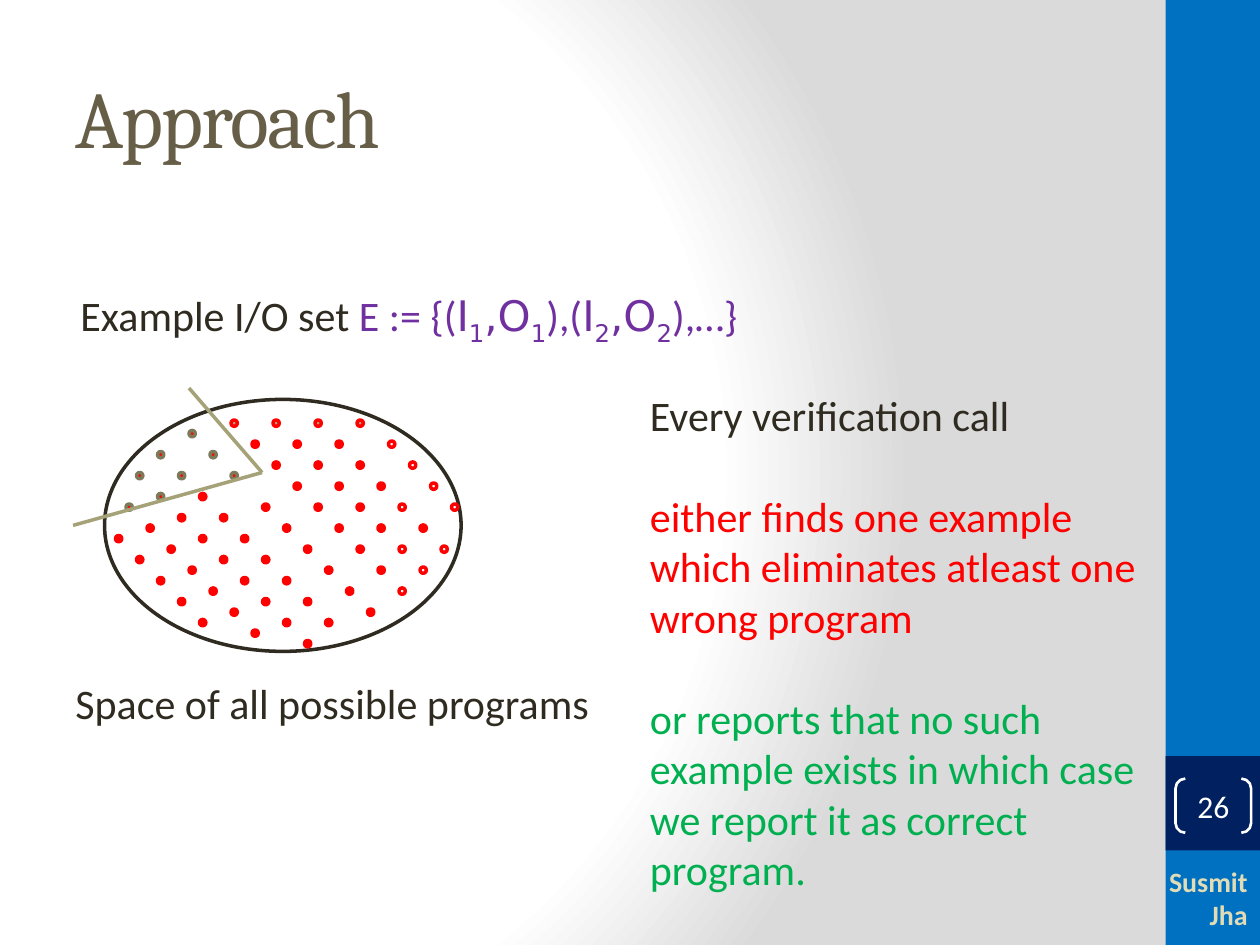
"""Build the "Approach" slide on narrowing a space of programs by examples."""
from typing import NamedTuple, Optional

import pptx
import pptx.dml.color
import pptx.enum.shapes
import pptx.enum.text
import pptx.oxml
import pptx.oxml.ns
import pptx.util

Inches = pptx.util.Inches
Pt = pptx.util.Pt
RGBColor = pptx.dml.color.RGBColor
Shape = pptx.enum.shapes.MSO_SHAPE
Anchor = pptx.enum.text.MSO_ANCHOR
Align = pptx.enum.text.PP_ALIGN
qn = pptx.oxml.ns.qn

WHITE = RGBColor(0xFF, 0xFF, 0xFF)
INK = RGBColor(0x2F, 0x2B, 0x20)
BROWN = RGBColor(0x67, 0x5E, 0x47)
BLUE = RGBColor(0x00, 0x70, 0xC0)
NAVY = RGBColor(0x00, 0x20, 0x60)
RED = RGBColor(0xFF, 0x00, 0x00)
GREEN = RGBColor(0x00, 0xB0, 0x50)
PURPLE = RGBColor(0x70, 0x30, 0xA0)
TAN = RGBColor(0xA9, 0xA5, 0x7C)
OLIVE = RGBColor(0x7D, 0x7A, 0x5C)
CUT = RGBColor(0xA6, 0xA2, 0x78)
CREAM = RGBColor(0xDF, 0xDC, 0xB7)

BODY_FONT = "Calibri"
SYMBOL_FONT = "DejaVu Sans"
GRID = 1 / 12
DOT_SIZE = 0.05


class Frame(NamedTuple):
    left: float
    top: float
    width: float
    height: float


class Span(NamedTuple):
    text: str
    color: RGBColor = INK
    font: str = BODY_FONT
    subscript: bool = False


class Line(NamedTuple):
    spans: list[Span]
    space_before: float = 0


class Diagonal(NamedTuple):
    column: int
    row: int
    kinds: str


class DotStyle(NamedTuple):
    fill: Optional[RGBColor]
    line: RGBColor


class Cut(NamedTuple):
    x: float
    y: float


DOT_STYLES = {
    "E": DotStyle(RED, OLIVE),
    "R": DotStyle(RED, RED),
    "T": DotStyle(TAN, RED),
    "H": DotStyle(None, RED),
}
DIAGONALS = [
    Diagonal(18, 41, "EEE"),
    Diagonal(22, 40, "TRRRRRRRH"),
    Diagonal(25, 48, "RRRRRR"),
    Diagonal(15, 43, "EERRRRRRR"),
    Diagonal(13, 45, "EERRRRRRR"),
    Diagonal(26, 40, "TRRRRRHH"),
    Diagonal(30, 40, "TRRRHRH"),
    Diagonal(37, 42, "HHHH"),
    Diagonal(12, 48, "ERRRRRR"),
    Diagonal(11, 51, "RRRRR"),
    Diagonal(34, 40, "T"),
]
CUT_TIP = Cut(2.08, 3.75)
CUT_STARTS = [Cut(1.5, 3.08), Cut(0.58, 4.17)]
EXAMPLE_SET = [
    Span("Example I/O set "),
    Span("E := {(", PURPLE),
    Span("I", PURPLE, SYMBOL_FONT),
    Span("1", PURPLE, SYMBOL_FONT, True),
    Span(",O", PURPLE, SYMBOL_FONT),
    Span("1", PURPLE, SYMBOL_FONT, True),
    Span("),(", PURPLE),
    Span("I", PURPLE, SYMBOL_FONT),
    Span("2", PURPLE, SYMBOL_FONT, True),
    Span(",O", PURPLE, SYMBOL_FONT),
    Span("2", PURPLE, SYMBOL_FONT, True),
    Span("),…}", PURPLE),
]
VERIFICATION = [
    Line([Span("Every verification call")]),
    Line([Span("either finds one example which eliminates atleast one wrong program", RED)], 29),
    Line([Span("or reports that no such example exists in which case", GREEN)], 29),
    Line([Span("we report it as correct program.", GREEN)]),
]


def paint_background(page) -> None:
    page.background.fill.solid()
    properties = page.element.find(".//" + qn("p:bgPr"))
    properties.remove(properties.find(qn("a:solidFill")))
    stops = "".join(
        f'<a:gs pos="{place * 1000}"><a:srgbClr val="{color}"/></a:gs>'
        for place, color in [(0, "FFFFFF"), (75, "FFFFFF"), (100, "DADADA")]
    )
    properties.insert(0, pptx.oxml.parse_xml(
        f'<a:gradFill {pptx.oxml.ns.nsdecls("a")} rotWithShape="1"><a:gsLst>{stops}</a:gsLst>'
        '<a:path path="circle"><a:fillToRect l="20000" t="50000" r="100000" b="50000"/>'
        "</a:path></a:gradFill>"
    ))


def add_figure(page, kind, frame: Frame, fill: Optional[RGBColor] = None,
               line: Optional[RGBColor] = None, weight: float = 2):
    figure = page.shapes.add_shape(kind, *map(Inches, frame))
    figure.shadow.inherit = False
    if fill is None:
        figure.fill.background()
    else:
        figure.fill.solid()
        figure.fill.fore_color.rgb = fill
    if line is None:
        figure.line.fill.background()
    else:
        figure.line.color.rgb = line
        figure.line.width = Pt(weight)
    return figure


def add_diagonal(page, diagonal: Diagonal) -> None:
    for step, kind in enumerate(diagonal.kinds):
        left = (diagonal.column + 2 * step) * GRID
        top = (diagonal.row + 2 * step) * GRID
        add_figure(page, Shape.OVAL, Frame(left, top, DOT_SIZE, DOT_SIZE), *DOT_STYLES[kind])


def add_cut(page, start: Cut) -> None:
    cut = page.shapes.add_connector(
        pptx.enum.shapes.MSO_CONNECTOR.STRAIGHT, *map(Inches, (*start, *CUT_TIP)))
    cut.line.color.rgb = CUT
    cut.line.width = Pt(2)
    cut.element.spPr.append(pptx.oxml.parse_xml(f'<a:effectLst {pptx.oxml.ns.nsdecls("a")}/>'))


def write_lines(box, lines: list[Line], size: float = 24, align=Align.LEFT,
                anchor=Anchor.TOP, bold: bool = False) -> None:
    box.text_frame.word_wrap = True
    box.text_frame.vertical_anchor = anchor
    for index, line in enumerate(lines):
        para = box.text_frame.add_paragraph() if index else box.text_frame.paragraphs[0]
        para.alignment = align
        para.space_before = Pt(line.space_before)
        para.font.size = Pt(size)
        para.font.bold = bold
        for part in line.spans:
            span = para.add_run()
            span.text = part.text
            span.font.size = Pt(size)
            span.font.name = part.font
            span.font.color.rgb = part.color
            if part.subscript:
                span.font._element.set("baseline", "-25000")


def add_text(page, frame: Frame, lines: list[Line], **style):
    box = page.shapes.add_textbox(*map(Inches, frame))
    write_lines(box, lines, **style)
    return box


def main() -> None:
    deck = pptx.Presentation()
    deck.slide_width, deck.slide_height = Inches(10), Inches(7.5)
    page = deck.slides.add_slide(deck.slide_layouts[6])
    paint_background(page)
    add_figure(page, Shape.RECTANGLE, Frame(9.25, 0, 0.75, 7.5), BLUE)
    add_figure(page, Shape.RECTANGLE, Frame(9.25, 6, 0.75, 0.75), NAVY)
    title = add_text(page, Frame(0.5, 0.3, 8.33, 1.25),
                     [Line([Span("Approach", BROWN, "Cambria")])], size=46, anchor=Anchor.MIDDLE)
    title.text_frame.paragraphs[0].runs[0].font._element.set("spc", "-100")
    add_figure(page, Shape.OVAL, Frame(0.83, 3.17, 2.83, 2), line=INK)
    for diagonal in DIAGONALS:
        add_diagonal(page, diagonal)
    add_text(page, Frame(0.5, 5.33, 4.58, 0.5), [Line([Span("Space of all possible programs")])])
    for start in CUT_STARTS:
        add_cut(page, start)
    add_text(page, Frame(0.54, 2.25, 6.79, 0.5), [Line(EXAMPLE_SET)])
    add_text(page, Frame(8.83, 6.75, 1.17, 0.75), [Line([Span("Susmit Jha", CREAM)])],
             size=16, align=Align.RIGHT, anchor=Anchor.MIDDLE, bold=True)
    number = add_figure(page, Shape.DOUBLE_BRACKET, Frame(9.33, 6.18, 0.6, 0.43),
                        line=WHITE, weight=1.5)
    number.adjustments[0] = 0.18
    frame = number.text_frame
    frame.margin_left = frame.margin_right = frame.margin_top = frame.margin_bottom = 0
    write_lines(number, [Line([Span("26", WHITE)])], size=18, align=Align.CENTER,
                anchor=Anchor.MIDDLE)
    add_text(page, Frame(5.06, 3.04, 4.11, 4.14), VERIFICATION)
    deck.save("out.pptx")


if __name__ == "__main__":
    main()
